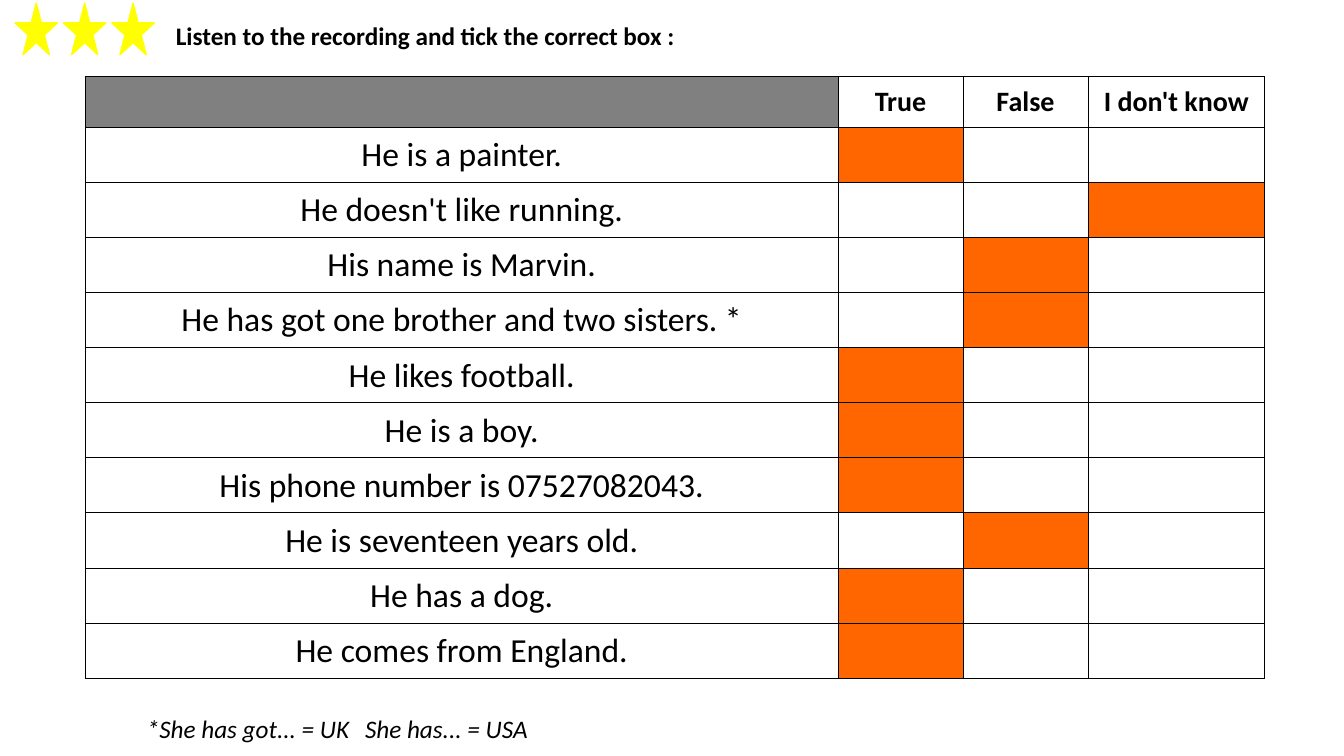
from lxml.etree import SubElement as Sub
from pptx import Presentation
from pptx.dml.color import RGBColor
from pptx.enum.shapes import MSO_SHAPE as Shape
from pptx.enum.text import MSO_ANCHOR as Anchor, MSO_AUTO_SIZE as Fit, PP_ALIGN as Align
from pptx.oxml import parse_xml
from pptx.oxml.ns import nsdecls, qn
from pptx.util import Cm, Pt

BLACK = RGBColor(0, 0, 0)
WHITE = RGBColor(255, 255, 255)
GRAY = RGBColor(128, 128, 128)
ORANGE = RGBColor(255, 102, 0)
YELLOW = RGBColor(255, 255, 0)

TASK = "Listen to the recording and tick the correct box :"
NOTE = "*She has got... = UK\tShe has... = USA"
HEADS = ["", "True", "False", "I don't know"]
ITEMS = [
    ("He is a painter.", "True"),
    ("He doesn't like running.", "I don't know"),
    ("His name is Marvin.", "False"),
    ("He has got one brother and two sisters. *", "False"),
    ("He likes football.", "True"),
    ("He is a boy.", "True"),
    ("His phone number is 07527082043.", "True"),
    ("He is seventeen years old.", "False"),
    ("He has a dog.", "True"),
    ("He comes from England.", "True"),
]
WIDTHS = [18.97, 3.15, 3.15, 4.45]
HEAD_H, ROW_H = 1.27, 1.39
STARS = 3


def style(para, size, bold=False, italic=False):
    for run in para.runs:
        font = run.font
        font.name, font.size = "Calibri", Pt(size)
        font.bold, font.italic = bold, italic
        font.color.rgb = BLACK


def write(box, text, **look):
    frame = box.text_frame
    frame.text = text
    frame.word_wrap = False
    frame.auto_size = Fit.NONE
    frame.vertical_anchor = Anchor.MIDDLE
    frame.margin_left = frame.margin_right = 0
    frame.margin_top = frame.margin_bottom = 0
    para = frame.paragraphs[0]
    para.alignment = Align.LEFT
    style(para, 18, **look)
    return para


def paint(cell, text, size, bold, color):
    cell.fill.solid()
    cell.fill.fore_color.rgb = color
    props = cell._tc.get_or_add_tcPr()
    for spot, side in enumerate("LRTB"):
        props.insert(spot, parse_xml(
            f'<a:ln{side} {nsdecls("a")} w="9525"><a:solidFill>'
            f'<a:srgbClr val="{BLACK}"/></a:solidFill></a:ln{side}>'))
    cell.vertical_anchor = Anchor.MIDDLE
    cell.margin_left = cell.margin_right = cell.margin_top = Cm(0.03)
    cell.margin_bottom = 0
    if text:
        cell.text = text
        para = cell.text_frame.paragraphs[0]
        para.alignment = Align.CENTER
        style(para, size, bold)


def main():
    deck = Presentation()
    deck.slide_width, deck.slide_height = Cm(33.87), Cm(19.05)
    slide = deck.slides.add_slide(deck.slide_layouts[5])
    shapes = slide.shapes

    title = shapes.title
    title.left, title.top, title.width, title.height = Cm(4.43), Cm(0.38), Cm(13), Cm(1.02)
    write(title, TASK, bold=True)

    grid = shapes.add_table(len(ITEMS) + 1, len(HEADS), Cm(2.15), Cm(1.93),
                            Cm(sum(WIDTHS)), Cm(HEAD_H + ROW_H * len(ITEMS))).table
    grid.first_row = grid.horz_banding = False
    for col, width in zip(grid.columns, WIDTHS):
        col.width = Cm(width)
    for num, row in enumerate(grid.rows):
        row.height = Cm(ROW_H if num else HEAD_H)
    for col, head in enumerate(HEADS):
        paint(grid.cell(0, col), head, 20, True, WHITE if head else GRAY)
        for num, (text, answer) in enumerate(ITEMS, 1):
            paint(grid.cell(num, col), "" if head else text, 24, False,
                  ORANGE if head == answer else WHITE)

    box = shapes.add_textbox(Cm(3.7), Cm(17.85), Cm(10), Cm(1.02))
    para = write(box, NOTE, italic=True)
    tabs = Sub(para._p.get_or_add_pPr(), qn("a:tabLst"))
    Sub(tabs, qn("a:tab"), pos=str(Cm(5.5)), algn="l")

    for num in range(STARS):
        star = shapes.add_shape(Shape.STAR_5_POINT, Cm(0.38 + 1.22 * num),
                                Cm(0.08), Cm(1.07), Cm(1.3))
        star.shadow.inherit = False
        star.fill.solid()
        star.fill.fore_color.rgb = YELLOW
        star.line.color.rgb = YELLOW
        star.line.width = Pt(1)

    deck.save("out.pptx")


if __name__ == "__main__":
    main()
